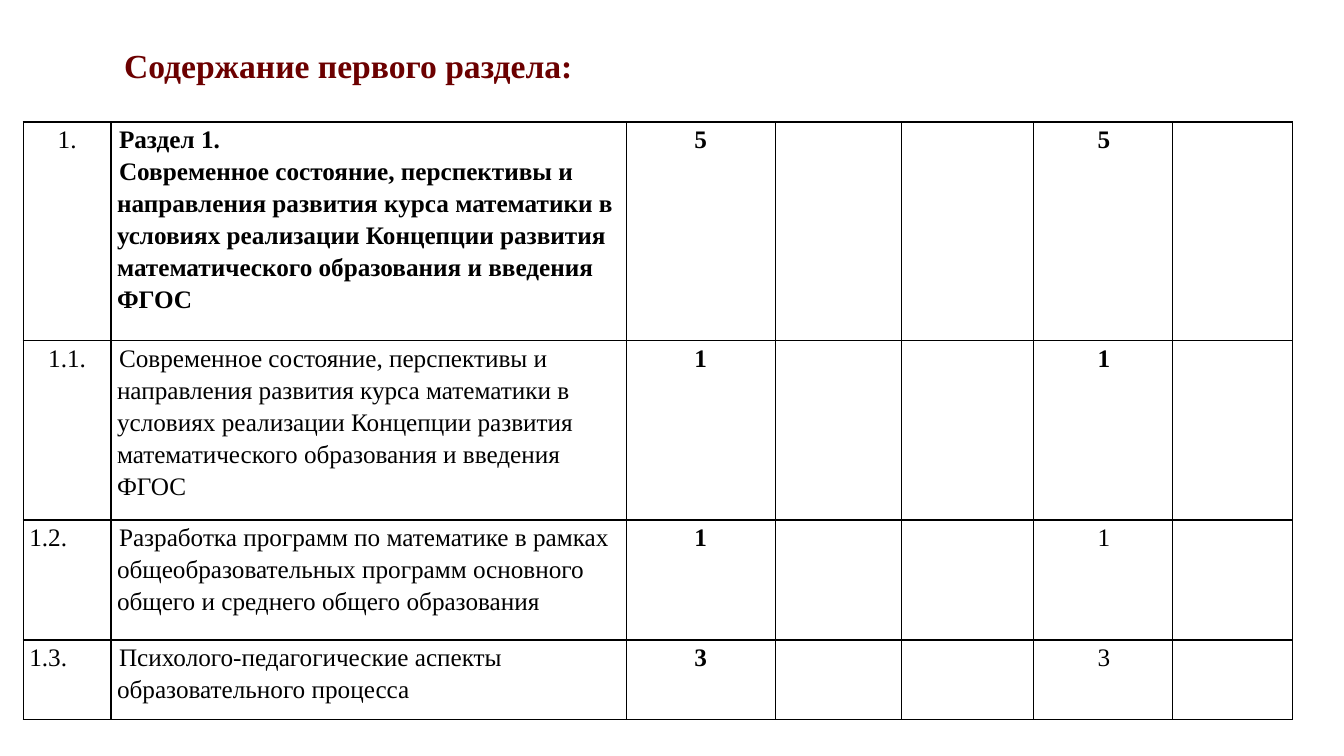
from lxml.etree import SubElement
from pptx import Presentation
from pptx.dml.color import RGBColor
from pptx.enum.text import MSO_ANCHOR, MSO_AUTO_SIZE, PP_ALIGN
from pptx.oxml.ns import qn
from pptx.util import Inches, Pt

BLACK = RGBColor(0x00, 0x00, 0x00)
WHITE = RGBColor(0xFF, 0xFF, 0xFF)
MAROON = RGBColor(0x6C, 0x00, 0x00)

TOPIC = (
    "Современное состояние, перспективы и направления развития курса математики "
    "в условиях реализации Концепции развития математического образования и введения ФГОС"
)

# Number, number alignment, topic paragraphs, hours, topic bold, last hours bold
SECTIONS = [
    ("1.", PP_ALIGN.CENTER, ["Раздел 1.", TOPIC], "5", True, True),
    ("1.1.", PP_ALIGN.CENTER, [TOPIC], "1", False, True),
    ("1.2.", PP_ALIGN.LEFT,
     ["Разработка программ по математике в рамках общеобразовательных программ "
      "основного общего и среднего общего образования"], "1", False, False),
    ("1.3.", PP_ALIGN.LEFT,
     ["Психолого-педагогические аспекты образовательного процесса"], "3", False, False),
]

# Shares of the slide's width and height, in percent
COLUMN_WIDTHS = [6.53, 38.33, 11.1, 9.38, 9.83, 10.35, 8.93]
ROW_HEIGHTS = [28.93, 23.73, 15.87, 10.53]


class SlideBuilder:
    font_name = "Times New Roman"
    title_size = Pt(24)
    body_size = Pt(18)
    hanging = Inches(0.02)

    def __init__(self, presentation):
        self.presentation = presentation
        self.slide = presentation.slides.add_slide(presentation.slide_layouts[5])

    def across(self, share):
        return round(self.presentation.slide_width * share / 100)

    def down(self, share):
        return round(self.presentation.slide_height * share / 100)

    def style_font(self, font, size, color, bold):
        font.name = self.font_name
        font.size = size
        font.bold = bold
        font.color.rgb = color

    def title(self, text, left, top, width, height):
        shape = self.slide.shapes.title
        shape.left, shape.top = self.across(left), self.down(top)
        shape.width, shape.height = self.across(width), self.down(height)
        frame = shape.text_frame
        frame.text = text
        frame.word_wrap = True
        frame.auto_size = MSO_AUTO_SIZE.SHAPE_TO_FIT_TEXT
        frame.vertical_anchor = MSO_ANCHOR.TOP
        paragraph = frame.paragraphs[0]
        paragraph.alignment = PP_ALIGN.LEFT
        self.style_font(paragraph.runs[0].font, self.title_size, MAROON, True)

    def table(self, left, top, widths, heights):
        table = self.slide.shapes.add_table(
            len(heights), len(widths), self.across(left), self.down(top),
            self.across(sum(widths)), self.down(sum(heights))).table
        table.first_row = table.horz_banding = False
        for column, width in zip(table.columns, widths):
            column.width = self.across(width)
        for row, height in zip(table.rows, heights):
            row.height = self.down(height)
        for cell in table.iter_cells():
            self.frame_cell(cell)
        return table

    def frame_cell(self, cell):
        cell.margin_left = cell.margin_right = Inches(0.06)
        cell.margin_top = cell.margin_bottom = 0
        properties = cell._tc.get_or_add_tcPr()
        for side in ("lnL", "lnR", "lnT", "lnB"):
            line = SubElement(properties, qn(f"a:{side}"), w=str(Pt(1)))
            fill = SubElement(line, qn("a:solidFill"))
            SubElement(fill, qn("a:srgbClr"), val=str(BLACK))
        cell.fill.solid()
        cell.fill.fore_color.rgb = WHITE

    def cell_text(self, cell, texts, alignment, bold=False, indent=0, after=10):
        cell.text_frame.text = "\n".join(texts)
        for paragraph in cell.text_frame.paragraphs:
            paragraph.alignment = alignment
            paragraph.line_spacing = 1.15
            paragraph.space_after = Pt(after)
            paragraph._p.get_or_add_pPr().set("indent", str(indent))
            self.style_font(paragraph.runs[0].font, self.body_size, BLACK, bold)


def main():
    presentation = Presentation()
    presentation.slide_width = Inches(13.33)
    presentation.slide_height = Inches(7.5)
    builder = SlideBuilder(presentation)

    # Heading
    builder.title("Содержание первого раздела:", 8.48, 5.33, 84.7, 6.67)

    # Curriculum table
    table = builder.table(1.73, 16.13, COLUMN_WIDTHS, ROW_HEIGHTS)
    for row, section in enumerate(SECTIONS):
        number, alignment, topics, hours, topic_bold, last_bold = section
        builder.cell_text(table.cell(row, 0), [number], alignment)
        builder.cell_text(table.cell(row, 1), topics, PP_ALIGN.LEFT, topic_bold,
                          builder.hanging, after=0)
        builder.cell_text(table.cell(row, 2), [hours], PP_ALIGN.CENTER, True)
        builder.cell_text(table.cell(row, 5), [hours], PP_ALIGN.CENTER, last_bold,
                          builder.hanging)

    presentation.save("out.pptx")


if __name__ == "__main__":
    main()
